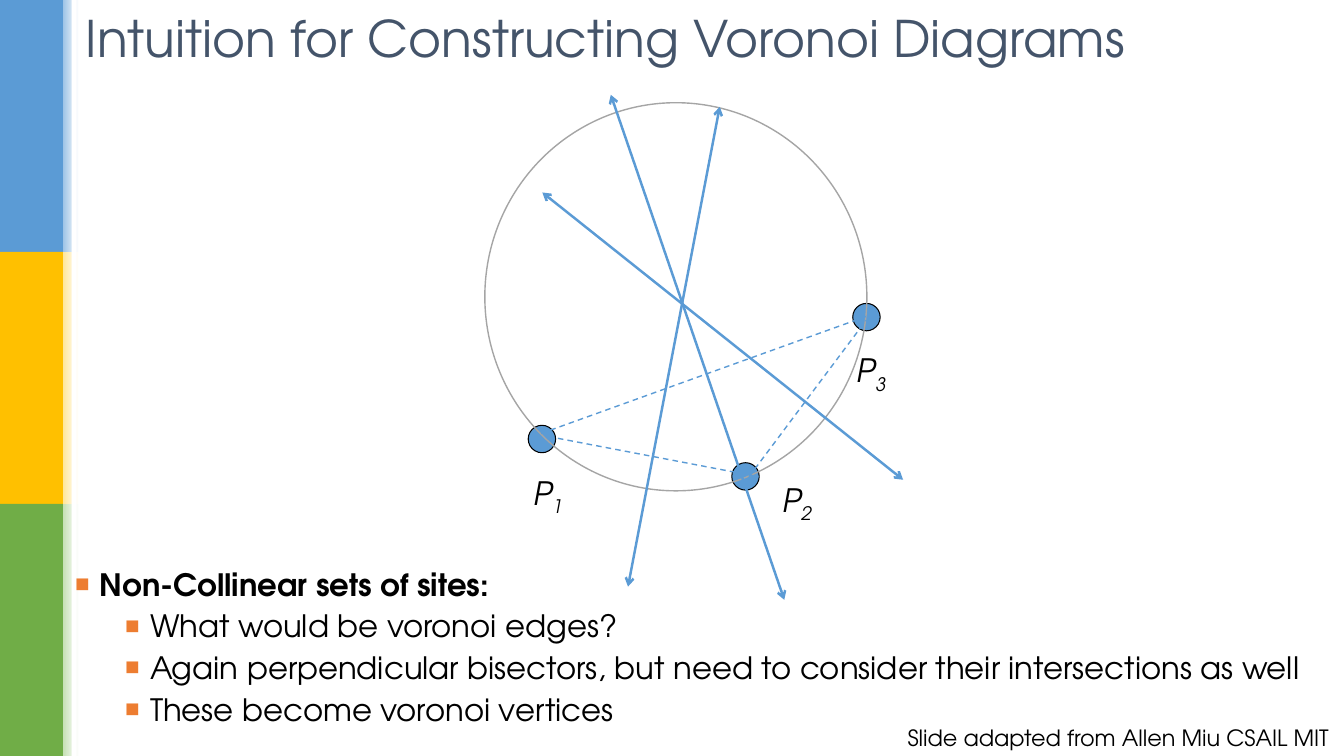
from lxml import etree
from pptx import Presentation
from pptx import util as u
from pptx.dml.color import RGBColor
from pptx.enum import dml, shapes, text
from pptx.oxml import ns

FACE = "TeX Gyre Adventor"
BLUE = RGBColor(0x5B, 0x9B, 0xD5)
GOLD = RGBColor(0xFF, 0xC0, 0x00)
GREEN = RGBColor(0x70, 0xAD, 0x47)
PALE_BLUE = RGBColor(0x9D, 0xC3, 0xE6)
PALE_GOLD = RGBColor(0xFF, 0xE6, 0x99)
PALE_GREEN = RGBColor(0xC5, 0xE0, 0xB4)
SLATE = RGBColor(0x44, 0x54, 0x6A)
ORANGE = RGBColor(0xED, 0x7D, 0x31)
GRAY = RGBColor(0xA5, 0xA5, 0xA5)
BLACK = RGBColor(0, 0, 0)
WHITE = RGBColor(255, 255, 255)

BANDS = [(BLUE, PALE_BLUE), (GOLD, PALE_GOLD), (GREEN, PALE_GREEN)]
SITES = [
    ("1", (377.3, 303.8), (373.7, 334.8)),
    ("2", (522.7, 330.5), (551.5, 339.8)),
    ("3", (609.1, 216.7), (604.8, 247)),
]
EDGES = [
    ((391.7, 311.8), (542.2, 340.6)),
    ((535, 340.6), (618.5, 229)),
    ((386.6, 309.6), (618.5, 226.1)),
]
CUTS = [
    ((514.1, 76.3), (448.6, 419)),
    ((387.4, 137.5), (645.1, 342.7)),
    ((560.2, 428.4), (436.3, 67.7)),
]
NOTES = [
    "Non-Collinear sets of sites:",
    "What would be voronoi edges?",
    "Again perpendicular bisectors, but need to consider their intersections as well",
    "These become voronoi vertices",
]


def pts(*vals):
    """Turn numbers into point lengths."""
    return [u.Pt(val) for val in vals]


def style(item, form):
    """Set each attribute in a format dict."""
    for key, val in form.items():
        setattr(item, key, val)


def ink(font, size, color=BLACK, **form):
    """Give a font its face, size and colour."""
    style(font, dict(name=FACE, size=u.Pt(size), **form))
    font.color.rgb = color


def child(node, tag, **atts):
    """Add a drawing element with attributes."""
    return etree.SubElement(node, ns.qn("a:" + tag), **atts)


def shape(slide, kind, box, fill=None, line=None, width=1):
    """Add a flat preset shape."""
    item = slide.shapes.add_shape(kind, *pts(*box))
    item.shadow.inherit = False
    if fill is None:
        item.fill.background()
    else:
        item.fill.solid()
        item.fill.fore_color.rgb = fill
    if line is None:
        item.line.fill.background()
    else:
        item.line.color.rgb = line
        item.line.width = u.Pt(width)
    return item


def sidebar(slide):
    """Draw the three bands with their fading edges."""
    rect = shapes.MSO_SHAPE.RECTANGLE
    for row, (full, pale) in enumerate(BANDS):
        shape(slide, rect, (0, row * 180, 45, 180), full)
        fade = shape(slide, rect, (45, row * 180, 11.5, 180), pale)
        fade.fill.gradient()
        fade.fill.gradient_angle = 0
        for stop, color in zip(fade.fill.gradient_stops, (pale, WHITE)):
            stop.color.rgb = color
    shape(slide, rect, (51.1, 0, 3.6, 540), WHITE)


def line(slide, start, end, width, dash=False):
    """Draw a dashed edge or a two-headed arrow."""
    item = slide.shapes.add_connector(
        shapes.MSO_CONNECTOR.STRAIGHT, *pts(*start, *end))
    item.line.color.rgb = BLUE
    item.line.width = u.Pt(width)
    if dash:
        item.line.dash_style = dml.MSO_LINE.DASH
    else:
        for tag in ("headEnd", "tailEnd"):
            child(item.line._get_or_add_ln(), tag, type="arrow")
    child(item._element.spPr, "effectLst")


def textbox(slide, box, **form):
    """Add a wrapping text box and return its frame."""
    frame = slide.shapes.add_textbox(*pts(*box)).text_frame
    style(frame, dict(word_wrap=True, **form))
    return frame


def site(slide, num, dot, spot):
    """Draw a site and its subscripted name."""
    shape(slide, shapes.MSO_SHAPE.OVAL, (*dot, 19.6, 19.6), BLUE, BLACK, 0.75)
    frame = textbox(slide, (*spot, 46.8, 35.3),
                    auto_size=text.MSO_AUTO_SIZE.SHAPE_TO_FIT_TEXT)
    for word in ("P", num):
        run = frame.paragraphs[0].add_run()
        run.text = word
        ink(run.font, 23, italic=True)
    run._r.get_or_add_rPr().set("baseline", "-25000")


def bullets(slide):
    """Write the heading and its points."""
    frame = textbox(slide, (46.1, 403.2, 900, 123.8))
    for row, words in enumerate(NOTES):
        para = frame.add_paragraph() if row else frame.paragraphs[0]
        style(para, dict(level=min(row, 1), line_spacing=0.9,
                         space_after=u.Pt(6)))
        prop = para._p.get_or_add_pPr()
        prop.set("marL", str(u.Pt(54 if row else 18)))
        prop.set("indent", str(u.Pt(-18)))
        child(child(prop, "buClr"), "srgbClr", val=str(ORANGE))
        child(prop, "buFont", typeface=FACE)
        child(prop, "buChar", char="▪")
        run = para.add_run()
        run.text = words
        ink(run.font, 22, bold=row == 0)


def heading(slide):
    """Place and format the title."""
    title = slide.shapes.title
    style(title, dict(zip(("left", "top", "width", "height"),
                          pts(54, 0, 814.3, 54))))
    frame = title.text_frame
    frame.text = "Intuition for Constructing Voronoi Diagrams"
    style(frame, dict(word_wrap=True, vertical_anchor=text.MSO_ANCHOR.MIDDLE))
    para = frame.paragraphs[0]
    para.alignment = text.PP_ALIGN.LEFT
    ink(para.runs[0].font, 36, SLATE)


def credit(slide):
    """Write the credit line at the foot."""
    frame = textbox(slide, (618.5, 509.8, 360.7, 33.8),
                    vertical_anchor=text.MSO_ANCHOR.MIDDLE)
    para = frame.paragraphs[0]
    para.alignment = text.PP_ALIGN.CENTER
    run = para.add_run()
    run.text = "Slide adapted from Allen Miu CSAIL MIT"
    ink(run.font, 16)


def main():
    """Build and save the slide."""
    deck = Presentation()
    style(deck, dict(slide_width=u.Pt(960), slide_height=u.Pt(540)))
    slide = deck.slides.add_slide(deck.slide_layouts[5])
    sidebar(slide)
    heading(slide)
    bullets(slide)
    for spot in SITES:
        site(slide, *spot)
    shape(slide, shapes.MSO_SHAPE.OVAL, (346.3, 73.4, 272.9, 277.2), line=GRAY)
    for ends in EDGES:
        line(slide, *ends, 1, dash=True)
    for ends in CUTS:
        line(slide, *ends, 1.75)
    credit(slide)
    deck.save("out.pptx")


if __name__ == "__main__":
    main()
